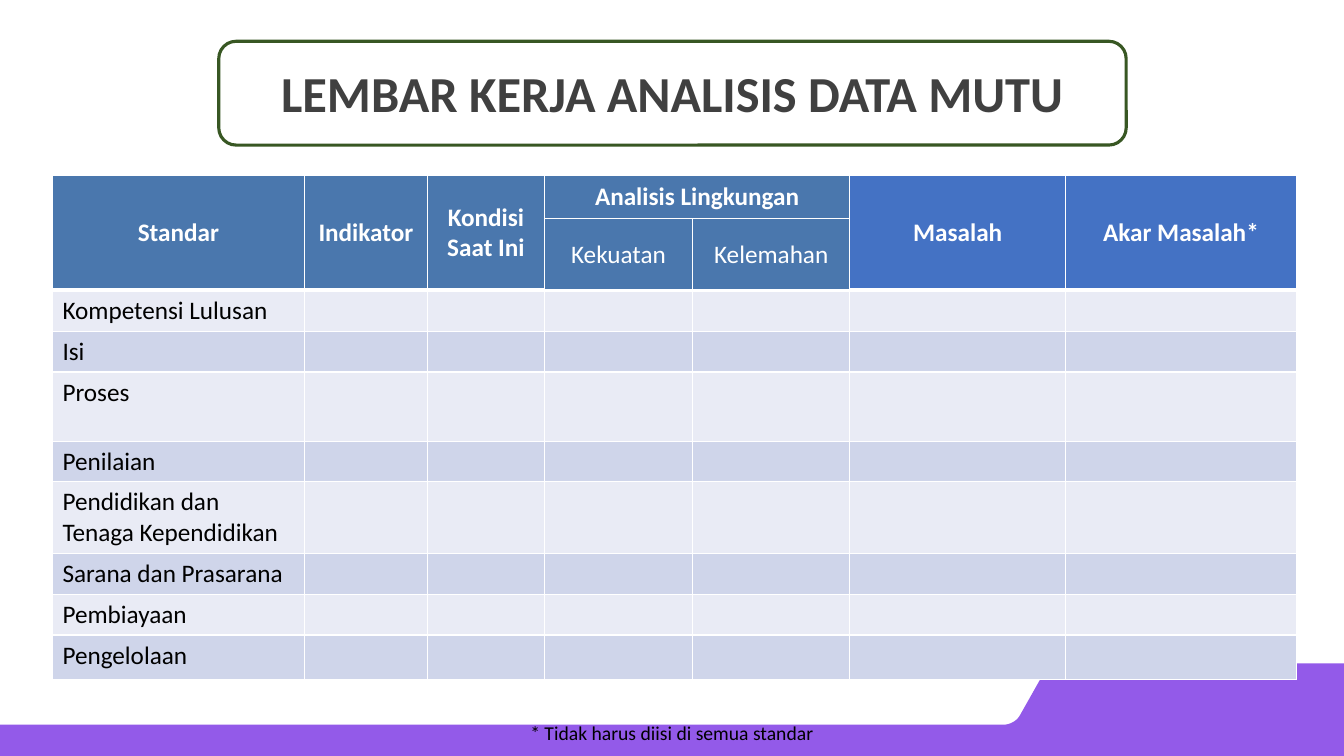
from dataclasses import dataclass

from lxml.etree import SubElement
from pptx import Presentation
from pptx.dml.color import RGBColor
from pptx.enum.shapes import MSO_SHAPE as Shape
from pptx.enum.text import MSO_ANCHOR as Anchor, PP_ALIGN as Align
from pptx.oxml.ns import qn
from pptx.util import Inches, Pt

WHITE = RGBColor(0xFF, 0xFF, 0xFF)
BLACK = RGBColor(0x00, 0x00, 0x00)
CHARCOAL = RGBColor(0x40, 0x40, 0x40)
PURPLE = RGBColor(0x93, 0x5A, 0xE9)
GREEN = RGBColor(0x38, 0x57, 0x23)
STEEL = RGBColor(0x4A, 0x77, 0xAD)
BLUE = RGBColor(0x44, 0x72, 0xC4)
BANDS = (RGBColor(0xE9, 0xEB, 0xF5), RGBColor(0xCF, 0xD5, 0xEA))

FONT = "Calibri"
TITLE_FORMAT = {"name": FONT, "size": Pt(36), "bold": True}
HEADER_FORMAT = {"name": FONT, "size": Pt(18), "bold": True}
BODY_FORMAT = {"name": FONT, "size": Pt(18), "bold": False}
NOTE_FORMAT = {"name": FONT, "size": Pt(14)}

Point = tuple[float, float]


@dataclass
class Header:
    text: str
    row: int
    column: int
    fill: RGBColor = STEEL
    rows: int = 1
    columns: int = 1
    bold: bool = True


HEADERS = [
    Header("Standar", 0, 0, rows=2),
    Header("Indikator", 0, 1, rows=2),
    Header("Kondisi Saat Ini", 0, 2, rows=2),
    Header("Analisis Lingkungan", 0, 3, columns=2),
    Header("Kekuatan", 1, 3, bold=False),
    Header("Kelemahan", 1, 4, bold=False),
    Header("Masalah", 0, 5, fill=BLUE, rows=2),
    Header("Akar Masalah*", 0, 6, fill=BLUE, rows=2),
]
STANDARDS = ["Kompetensi Lulusan", "Isi", "Proses", "Penilaian",
             "Pendidikan dan Tenaga Kependidikan", "Sarana dan Prasarana",
             "Pembiayaan", "Pengelolaan"]
COLUMN_WIDTHS = [2.5, 1.22, 1.16, 1.47, 1.56, 2.14, 2.29]
ROW_HEIGHTS = [0.43, 0.71, 0.41, 0.4, 0.69, 0.4, 0.71, 0.41, 0.4, 0.44]


def write(frame, text: str, color: RGBColor, formats: dict, align=Align.CENTER):
    paragraph = frame.paragraphs[0]
    paragraph.alignment = align
    run = paragraph.add_run()
    run.text = text
    for name, value in formats.items():
        setattr(run.font, name, value)
    run.font.color.rgb = color
    return paragraph


def add_text(slide, box: tuple, text: str, color: RGBColor, formats: dict):
    shape = slide.shapes.add_textbox(*map(Inches, box))
    shape.text_frame.word_wrap = True
    return shape.text_frame, write(shape.text_frame, text, color, formats)


def curve(start: Point, first: Point, second: Point, end: Point, steps: int = 10) -> list[Point]:
    """Points along a cubic curve."""
    points = []
    for step in range(steps + 1):
        t = step / steps
        weights = ((1 - t) ** 3, 3 * t * (1 - t) ** 2, 3 * t * t * (1 - t), t ** 3)
        controls = (start, first, second, end)
        points.append(tuple(sum(w * c[axis] for w, c in zip(weights, controls)) for axis in (0, 1)))
    return points


def add_footer_band(slide) -> None:
    outline = [
        *curve((10.55, 6.58), (10.46, 6.58), (10.38, 6.63), (10.34, 6.7)),
        *curve((10.12, 7.09), (10.09, 7.15), (10.02, 7.19), (9.95, 7.19)),
        (0, 7.19), (0, 7.5), (13.33, 7.5), (13.33, 6.58),
    ]
    points = [(Inches(x), Inches(y)) for x, y in outline]
    builder = slide.shapes.build_freeform(*points[0])
    builder.add_line_segments(points[1:], close=True)
    band = builder.convert_to_shape()
    band.shadow.inherit = False
    band.fill.solid()
    band.fill.fore_color.rgb = PURPLE
    band.line.fill.background()


def style_cell(cell, color: RGBColor, top: float = 1, bottom: float = 1) -> None:
    properties = cell._tc.get_or_add_tcPr()
    for side, width in {"L": 1, "R": 1, "T": top, "B": bottom}.items():
        line = SubElement(properties, qn(f"a:ln{side}"), w=str(Pt(width)))
        fill = SubElement(line, qn("a:solidFill"))
        SubElement(fill, qn("a:srgbClr"), val=str(WHITE))
    cell.fill.solid()
    cell.fill.fore_color.rgb = color


def add_worksheet(slide) -> None:
    frame = slide.shapes.add_table(
        len(ROW_HEIGHTS), len(COLUMN_WIDTHS), Inches(0.52), Inches(1.74),
        Inches(sum(COLUMN_WIDTHS)), Inches(sum(ROW_HEIGHTS)))
    table = frame.table
    table.first_row = table.horz_banding = False
    for column, width in zip(table.columns, COLUMN_WIDTHS):
        column.width = Inches(width)
    for row, height in zip(table.rows, ROW_HEIGHTS):
        row.height = Inches(height)

    # Header cells
    for header in HEADERS:
        cell = table.cell(header.row, header.column)
        last_row = header.row + header.rows - 1
        last_column = header.column + header.columns - 1
        for row in range(header.row, last_row + 1):
            for column in range(header.column, last_column + 1):
                bottom = 1 if last_row == 0 else 3 if header.rows == 2 else 2.25
                style_cell(table.cell(row, column), header.fill, bottom=bottom)
        if header.rows * header.columns > 1:
            cell.merge(table.cell(last_row, last_column))
        cell.vertical_anchor = Anchor.MIDDLE
        write(cell.text_frame, header.text, WHITE, HEADER_FORMAT | {"bold": header.bold})

    # One banded row for each standard
    for index, standard in enumerate(STANDARDS):
        for column in range(len(COLUMN_WIDTHS)):
            top = 1 if index else 2.25 if column in (3, 4) else 3
            style_cell(table.cell(index + 2, column), BANDS[index % 2], top=top)
        write(table.cell(index + 2, 0).text_frame, standard, BLACK, BODY_FORMAT, Align.LEFT)


def add_title_frame(slide) -> None:
    shape = slide.shapes.add_shape(
        Shape.ROUNDED_RECTANGLE, Inches(2.17), Inches(0.41), Inches(9), Inches(1.03))
    shape.shadow.inherit = False
    shape.fill.background()
    shape.line.color.rgb = GREEN
    shape.line.width = Pt(2.25)


def main() -> None:
    presentation = Presentation()
    presentation.slide_width = Inches(13.33)
    presentation.slide_height = Inches(7.5)
    slide = presentation.slides.add_slide(presentation.slide_layouts[6])

    add_footer_band(slide)

    # Title
    frame, paragraph = add_text(slide, (0.92, 0.23, 11.5, 1.45),
                                "LEMBAR KERJA ANALISIS DATA MUTU", CHARCOAL, TITLE_FORMAT)
    frame.vertical_anchor = Anchor.MIDDLE
    paragraph.line_spacing = 0.9

    add_worksheet(slide)
    add_title_frame(slide)

    # Footnote
    add_text(slide, (4.28, 7.1, 4.77, 0.34),
             "* Tidak harus diisi di semua standar", BLACK, NOTE_FORMAT)

    presentation.save("out.pptx")


if __name__ == "__main__":
    main()
